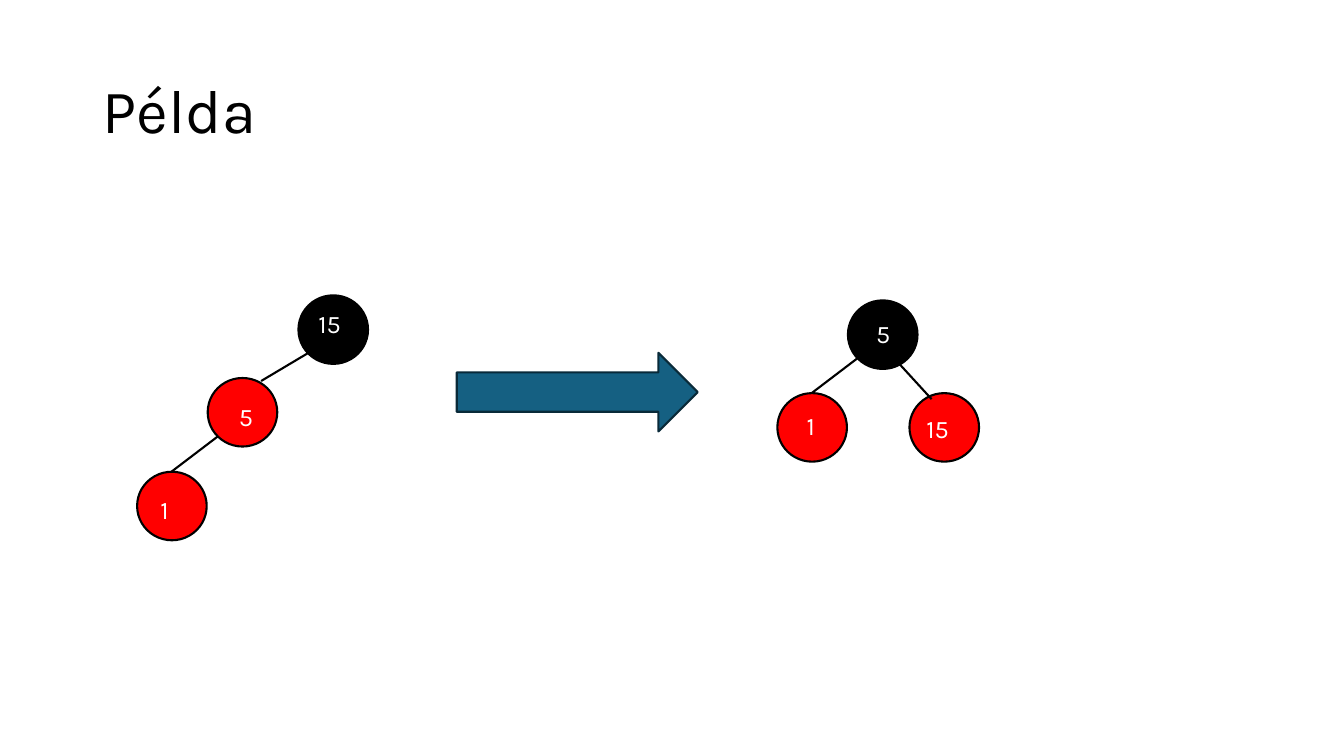
import pptx
import pptx.util
import pptx.dml.color
import pptx.enum.shapes
import pptx.enum.text
import pptx.oxml

Inches, Pt = pptx.util.Inches, pptx.util.Pt
RGBColor = pptx.dml.color.RGBColor
SHAPE = pptx.enum.shapes.MSO_SHAPE
ANCHOR = pptx.enum.text.MSO_ANCHOR

BLACK = RGBColor(0x00, 0x00, 0x00)
WHITE = RGBColor(0xFF, 0xFF, 0xFF)
RED = RGBColor(0xFF, 0x00, 0x00)
TEAL = RGBColor(0x15, 0x60, 0x82)
DARK_TEAL = RGBColor(0x09, 0x2A, 0x39)

prs = pptx.Presentation()
prs.slide_width, prs.slide_height = Inches(13.33), Inches(7.5)
s = prs.slides.add_slide(prs.slide_layouts[6])


def add_shape(kind, x, y, w, h, fill, line):
    sp = s.shapes.add_shape(kind, Inches(x), Inches(y), Inches(w), Inches(h))
    sp.shadow.inherit = False
    sp.fill.solid()
    sp.fill.fore_color.rgb = fill
    sp.line.color.rgb = line
    sp.line.width = Pt(1.5)


def add_text(text, x, y, w, h, size, color, frame):
    sp = s.shapes.add_textbox(Inches(x), Inches(y), Inches(w), Inches(h))
    tf = sp.text_frame
    for name, value in frame.items():
        setattr(tf, name, value)
    p = tf.paragraphs[0]
    r = p.add_run()
    r.text = text
    for name, value in {"name": "Karla", "size": Pt(size)}.items():
        setattr(r.font, name, value)
    r.font.color.rgb = color
    return p


# Title
p = add_text("Példa", 0.92, 0.4, 11.5, 1.45, 44, BLACK,
             {"word_wrap": True, "vertical_anchor": ANCHOR.MIDDLE})
p.line_spacing = 0.9

# Tree nodes: circle left, top, fill, key, key box left, top, key indent
nodes = [
    (8.41, 2.98, BLACK, "5", 8.47, 3.11, 0.12),
    (7.71, 3.9, RED, "1", 7.84, 4.02, 0.06),
    (9.02, 3.9, RED, "15", 9.09, 4.05, 0),
    (2.06, 3.75, RED, "5", 2.15, 3.93, 0.12),
    (1.36, 4.68, RED, "1", 1.43, 4.85, 0.06),
    (2.96, 2.93, BLACK, "15", 3.06, 3.01, 0),
]
for x, y, fill, *_ in nodes:
    add_shape(SHAPE.OVAL, x, y, 0.69, 0.68, fill, BLACK)

# Edges between nodes
edges = [
    (8.51, 3.55, 8.05, 3.9),
    (8.92, 3.61, 9.24, 3.96),
    (2.16, 4.33, 1.7, 4.68),
    (2.59, 3.78, 3.06, 3.5),
]
for ends in edges:
    edge = s.shapes.add_connector(pptx.enum.shapes.MSO_CONNECTOR.STRAIGHT,
                                  *[Inches(v) for v in ends])
    edge.line.color.rgb = BLACK
    edge.line.width = Pt(1.5)
    edge._element.spPr.append(pptx.oxml.parse_xml(
        '<a:effectLst xmlns:a="http://schemas.openxmlformats.org/drawingml/2006/main"/>'))

# Node keys
for _, _, _, key, x, y, indent in nodes:
    add_text(key, x, y, 0.56, 0.4, 18, WHITE,
             {"word_wrap": True, "margin_left": Inches(0.1 + indent)})

# Arrow from the first tree to the second
add_shape(SHAPE.RIGHT_ARROW, 4.53, 3.5, 2.39, 0.78, TEAL, DARK_TEAL)

prs.save("out.pptx")
